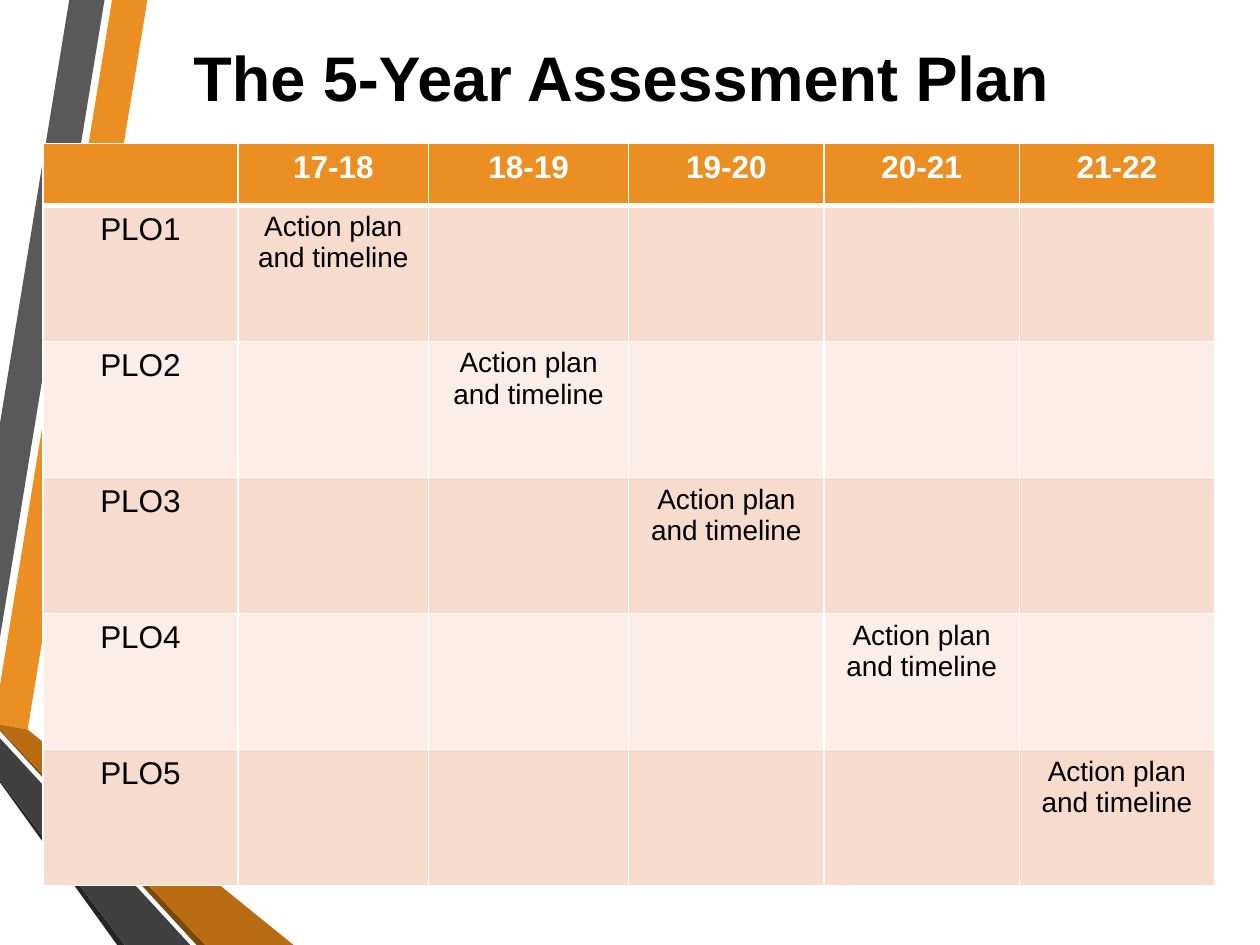
from dataclasses import dataclass

from lxml import etree
from pptx import Presentation
from pptx.dml.color import RGBColor
from pptx.enum.text import MSO_ANCHOR, PP_ALIGN
from pptx.oxml.ns import qn
from pptx.util import Inches, Pt

CENTER = PP_ALIGN.CENTER
MIDDLE = MSO_ANCHOR.MIDDLE


@dataclass(frozen=True)
class Theme:
    font: str = "Arial"
    white: str = "FFFFFF"
    black: str = "000000"
    orange: str = "EB8F22"
    brown: str = "B96C11"
    umber: str = "7B480B"
    gray: str = "595959"
    coal: str = "404040"
    ink: str = "262626"
    bands: tuple = ("F7DBCD", "FBEEE8")
    title: int = 36
    head: int = 18
    note: int = 16


class Deck:
    def __init__(self, theme):
        self.theme = theme
        self.show = Presentation()
        self.show.slide_width = Inches(10)
        self.show.slide_height = Inches(7.5)
        self.slide = self.show.slides.add_slide(self.show.slide_layouts[6])

    def label(self, frame, text, size, color, bold=False):
        para = frame.paragraphs[0]
        para.alignment = CENTER
        run = para.add_run()
        run.text = text
        style = {"name": self.theme.font, "size": Pt(size), "bold": bold}
        for key, value in style.items():
            setattr(run.font, key, value)
        run.font.color.rgb = RGBColor.from_string(color)

    def band(self, color, points):
        spots = [(Inches(x), Inches(y)) for x, y in points]
        pen = self.slide.shapes.build_freeform(*spots[0])
        pen.add_line_segments(spots[1:], close=True)
        shape = pen.convert_to_shape()
        shape.shadow.inherit = False
        shape.fill.solid()
        shape.fill.fore_color.rgb = RGBColor.from_string(color)
        shape.line.fill.background()

    def title(self, text, box):
        frame = self.slide.shapes.add_textbox(*map(Inches, box)).text_frame
        style = {"word_wrap": True, "vertical_anchor": MIDDLE}
        for key, value in style.items():
            setattr(frame, key, value)
        self.label(frame, text, self.theme.title, self.theme.black, True)

    def edge(self, cell, **widths):
        props = cell._tc.get_or_add_tcPr()
        for side in "LRTB":
            width = Pt(widths.get(side, 1))
            line = etree.SubElement(props, qn(f"a:ln{side}"), w=str(int(width)))
            fill = etree.SubElement(line, qn("a:solidFill"))
            etree.SubElement(fill, qn("a:srgbClr"), val=self.theme.white)

    def grid(self, rows, box, widths, heights):
        theme = self.theme
        size = len(rows), len(widths)
        table = self.slide.shapes.add_table(*size, *map(Inches, box)).table
        for col, width in zip(table.columns, widths):
            col.width = Inches(width)
        for row, height in zip(table.rows, heights):
            row.height = Inches(height)
        for i, row in enumerate(rows):
            head = i == 0
            tint = theme.orange if head else theme.bands[(i - 1) % 2]
            rule = {"B": 3} if head else {"T": 3} if i == 1 else {}
            for j, text in enumerate(row):
                cell = table.cell(i, j)
                self.edge(cell, **rule)
                cell.fill.solid()
                cell.fill.fore_color.rgb = RGBColor.from_string(tint)
                if text:
                    points = theme.head if head or j == 0 else theme.note
                    color = theme.white if head else theme.black
                    self.label(cell.text_frame, text, points, color, head)


def main():
    theme = Theme()
    deck = Deck(theme)
    bands = [
        (theme.orange, [(0, 5.44), (0, 5.75), (0.22, 5.79), (1.17, 0), (0.89, 0)]),
        (theme.gray, [(0.83, 0), (0.55, 0), (0, 3.36), (0, 5.06)]),
        (theme.ink, [(0, 6.19), (0, 6.21), (0.93, 7.5), (0.99, 7.5)]),
        (theme.umber, [(0, 5.79), (0, 5.8), (1.56, 7.5), (1.63, 7.5)]),
        (theme.brown, [(0, 5.79), (1.63, 7.5), (2.33, 7.5), (0.22, 5.79), (0, 5.75)]),
        (theme.coal, [(0, 6.19), (0.99, 7.5), (1.51, 7.5), (0, 5.86)]),
    ]
    for color, points in bands:
        deck.band(color, points)
    deck.title("The 5-Year Assessment Plan ", (0.5, 0.25, 9, 0.71))

    years = [f"{year}-{year + 1}" for year in range(17, 22)]
    rows = [["", *years]]
    for i in range(len(years)):
        plan = ["Action plan and timeline" if i == j else "" for j in range(len(years))]
        rows.append([f"PLO{i + 1}", *plan])
    widths = [1.55, 1.51, 1.59, 1.55, 1.55, 1.55]
    heights = [0.49] + [1.08] * len(years)
    deck.grid(rows, (0.34, 1.14, 9.32, 5.88), widths, heights)
    deck.show.save("out.pptx")


if __name__ == "__main__":
    main()
